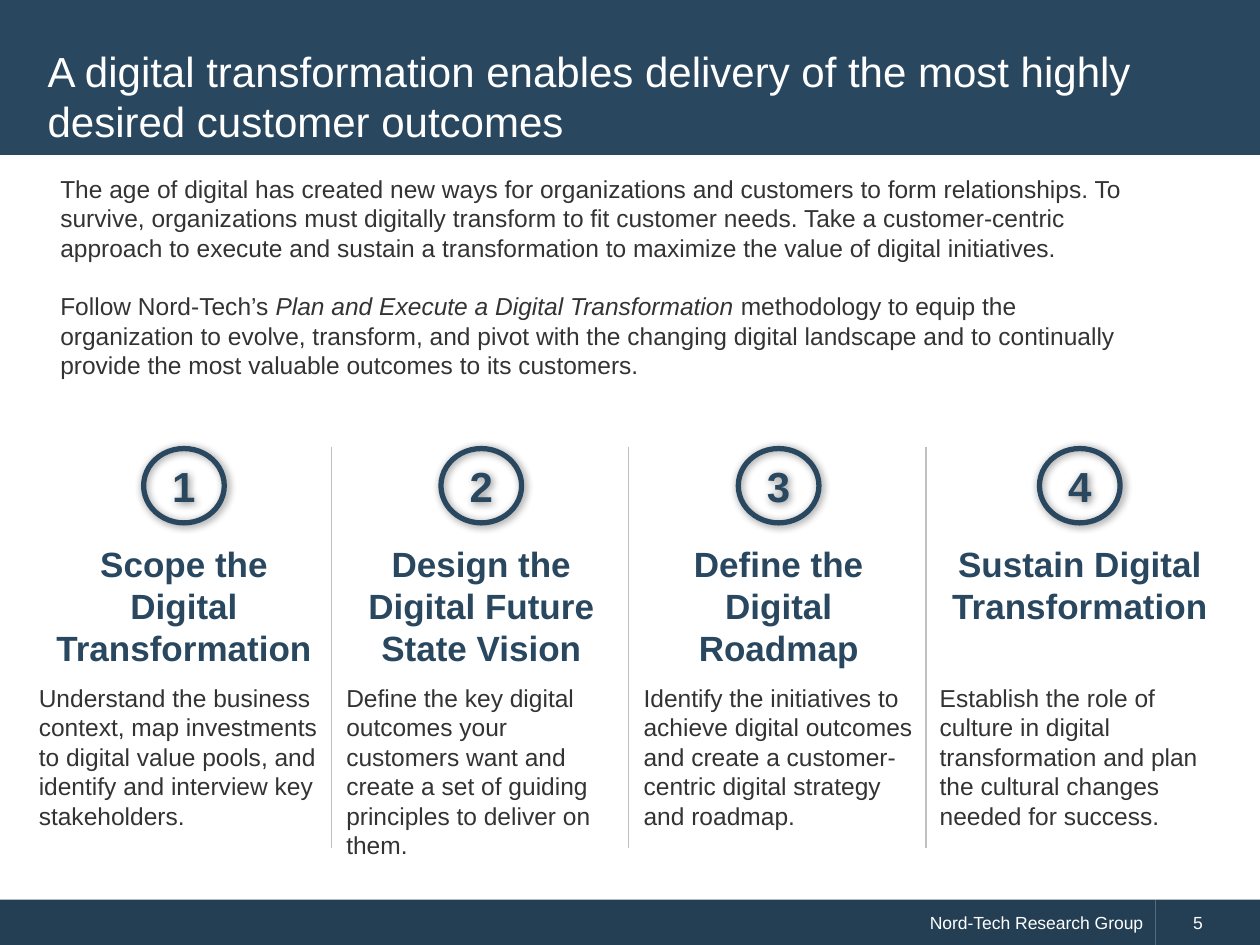
from lxml import etree
from pptx import Presentation
from pptx.dml.color import RGBColor
from pptx.enum.shapes import MSO_CONNECTOR, MSO_SHAPE
from pptx.enum.text import MSO_ANCHOR, PP_ALIGN
from pptx.oxml import parse_xml
from pptx.oxml.ns import nsdecls, qn
from pptx.util import Inches, Pt

COLORS = {"band": "29475F", "footer": "243F54", "white": "FFFFFF",
          "body": "333333", "rule": "BFBFBF"}
FONT = "Arial"
BRAND = "Nord-Tech"
INTRO = [
    [("The age of digital has created new ways for organizations and customers to form "
      "relationships. To survive, organizations must digitally transform to fit customer "
      "needs. Take a customer-centric approach to execute and sustain a transformation to "
      "maximize the value of digital initiatives.", False)],
    [(f"Follow {BRAND}’s ", False),
     ("Plan and Execute a Digital Transformation ", True),
     ("methodology to equip the organization to evolve, transform, and pivot with the "
      "changing digital landscape and to continually provide the most valuable outcomes "
      "to its customers.", False)],
]
STEPS = [
    (1.46, 0.21, 2.43, "Scope the Digital Transformation",
     "Understand the business context, map investments to digital value pools, and "
     "identify and interview key stakeholders."),
    (3.82, 2.65, 2.33, "Design the Digital Future State Vision",
     "Define the key digital outcomes your customers want and create a set of guiding "
     "principles to deliver on them."),
    (6.18, 5.01, 2.34, "Define the Digital Roadmap",
     "Identify the initiatives to achieve digital outcomes and create a "
     "customer-centric digital strategy and roadmap."),
    (8.57, 7.36, 2.44, "Sustain Digital Transformation",
     "Establish the role of culture in digital transformation and plan the cultural "
     "changes needed for success."),
]


def rgb(name):
    """Return the named palette colour."""
    return RGBColor.from_string(COLORS[name])


def write(sp, paragraphs, size=14, color="body", bold=False, align=PP_ALIGN.LEFT,
          anchor=MSO_ANCHOR.TOP, gap=0):
    """Fill a shape with a string or with paragraphs of (text, italic) runs."""
    if isinstance(paragraphs, str):
        paragraphs = [[(paragraphs, False)]]
    tf = sp.text_frame
    tf.word_wrap = True
    tf.vertical_anchor = anchor
    for i, runs in enumerate(paragraphs):
        p = tf.add_paragraph() if i else tf.paragraphs[0]
        p.alignment = align
        p.space_before = Pt(gap if i else 0)
        for text, italic in runs:
            r = p.add_run()
            r.text = text
            r.font.name, r.font.size = FONT, Pt(size)
            r.font.bold, r.font.italic = bold, italic
            r.font.color.rgb = rgb(color)


def add_text(s, x, y, w, h, paragraphs, **fmt):
    """Add a wrapped text box."""
    sp = s.shapes.add_textbox(Inches(x), Inches(y), Inches(w), Inches(h))
    write(sp, paragraphs, **fmt)


def add_block(s, x, y, w, h, fill):
    """Add a plain filled rectangle."""
    sp = s.shapes.add_shape(MSO_SHAPE.RECTANGLE, Inches(x), Inches(y), Inches(w), Inches(h))
    sp.shadow.inherit = False
    sp.fill.solid()
    sp.fill.fore_color.rgb = rgb(fill)
    sp.line.fill.background()
    return sp


def add_badge(s, cx, y, number):
    """Add a numbered ring with a soft shadow, centred on cx."""
    w, h = 0.64, 0.59
    sp = s.shapes.add_shape(MSO_SHAPE.OVAL, Inches(cx - w / 2), Inches(y), Inches(w), Inches(h))
    sp.shadow.inherit = False
    sp.fill.background()
    sp.line.color.rgb = rgb("band")
    sp.line.width = Pt(3)
    sp._element.spPr.find(qn("a:effectLst")).append(parse_xml(
        f'<a:outerShdw {nsdecls("a")} blurRad="{Pt(5)}" dist="{Pt(1.4)}" dir="2700000" '
        'algn="tl" rotWithShape="0"><a:srgbClr val="000000"><a:alpha val="45000"/>'
        '</a:srgbClr></a:outerShdw>'))
    write(sp, str(number), size=24, color="band", bold=True,
          align=PP_ALIGN.CENTER, anchor=MSO_ANCHOR.MIDDLE)


def add_divider(s, x, y, h):
    """Add a thin vertical rule."""
    line = s.shapes.add_connector(MSO_CONNECTOR.STRAIGHT, Inches(x), Inches(y),
                                  Inches(x), Inches(y + h))
    line.line.color.rgb = rgb("rule")
    line.line.width = Pt(0.75)
    etree.SubElement(line._element.spPr, qn("a:effectLst"))


def add_header(s, x, y, w, h):
    """Draw the title band."""
    add_block(s, x, y, w, h, "band")
    add_text(s, x + 0.28, y + 0.28, w - 0.57, h - 0.27,
             "A digital transformation enables delivery of the most highly desired "
             "customer outcomes", size=24, color="white", anchor=MSO_ANCHOR.MIDDLE)


def add_footer(s, x, y, w, h):
    """Draw the footer band with group name and page number."""
    page_w = 0.83
    name = add_block(s, x, y, w - page_w, h, "footer")
    page = add_block(s, x + w - page_w, y, page_w, h, "footer")
    page.text_frame.margin_left = Inches(0.3)
    fmt = dict(size=10, color="white", anchor=MSO_ANCHOR.MIDDLE)
    write(name, f"{BRAND} Research Group", align=PP_ALIGN.RIGHT, **fmt)
    write(page, "5", **fmt)


def add_steps(s, x, y, pitch, h):
    """Draw the numbered columns and the rules between them."""
    for i, (cx, left, w, heading, body) in enumerate(STEPS):
        if i:
            add_divider(s, x + i * pitch, y, h)
        add_badge(s, cx, y + 0.01, i + 1)
        add_text(s, cx - 1.16, y + 0.71, 2.32, 1.11, heading, size=20, color="band",
                 bold=True, align=PP_ALIGN.CENTER)
        add_text(s, left, y + 1.82, w, 1.28, body)


def main():
    """Build and save the slide."""
    prs = Presentation()
    prs.slide_width, prs.slide_height = Inches(10), Inches(7.5)
    s = prs.slides.add_slide(prs.slide_layouts[6])
    add_footer(s, 0, 7.14, 10, 0.36)
    add_header(s, 0, 0, 10, 1.23)
    add_text(s, 0.38, 1.33, 8.71, 1.75, INTRO, gap=16.8)
    add_steps(s, 0.27, 3.55, 2.36, 3.18)
    prs.save("out.pptx")


if __name__ == "__main__":
    main()
